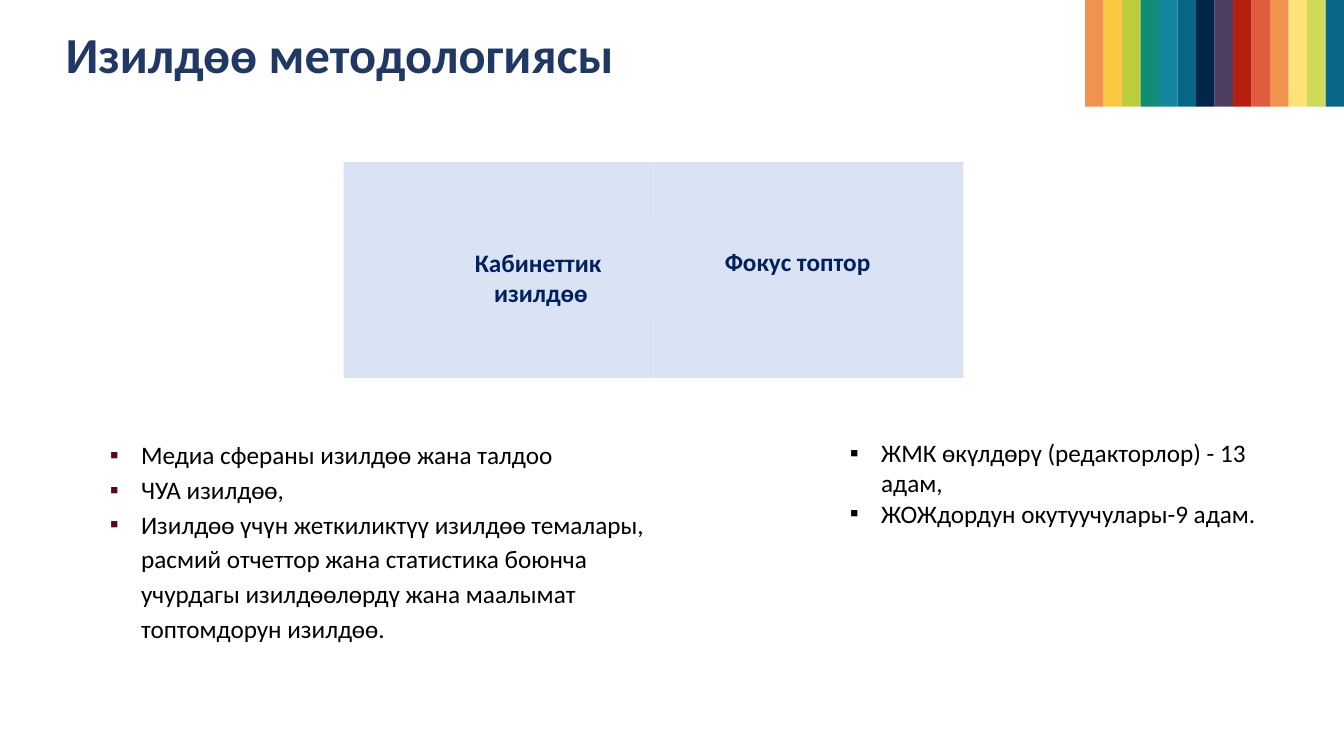
import dataclasses

import lxml.etree
import pptx
import pptx.dml.color
import pptx.enum.shapes
import pptx.enum.text
import pptx.oxml.ns
import pptx.util

KIND = pptx.enum.shapes.MSO_SHAPE
ALIGN = pptx.enum.text.PP_ALIGN
COLS = 160
WIDE = pptx.util.Inches(13.33)
HIGH = pptx.util.Inches(7.5)
UNIT = WIDE / COLS


@dataclasses.dataclass(frozen=True)
class Theme:
    font: str = "Calibri"
    head: int = 36
    body: int = 18
    title: str = "203864"
    label: str = "002060"
    text: str = "000000"
    mark: str = "5D0617"
    panel: str = "DAE3F3"
    bars: tuple = (
        "F0934E", "F9C943", "BCCE3E", "0F8E73", "1387A0", "086787", "032548",
        "4E3F60", "B71F11", "E15C3E", "F0934E", "FDE277", "CFDA57", "086787",
    )


THEME = Theme()


def grid(*cells):
    return [round(cell * UNIT) for cell in cells]


def block(slide, kind, box, color):
    shape = slide.shapes.add_shape(kind, *grid(*box))
    shape.shadow.inherit = False
    shape.fill.solid()
    shape.fill.fore_color.rgb = pptx.dml.color.RGBColor.from_string(color)
    shape.line.fill.background()


def write(para, text, size, color, bold=False):
    run = para.add_run()
    run.text = text
    run.font.name = THEME.font
    run.font.size = pptx.util.Pt(size)
    run.font.bold = bold
    run.font.color.rgb = pptx.dml.color.RGBColor.from_string(color)


def paras(slide, box, lines):
    frame = slide.shapes.add_textbox(*grid(*box)).text_frame
    frame.word_wrap = True
    for index, line in enumerate(lines):
        para = frame.add_paragraph() if index else frame.paragraphs[0]
        yield para, line


def bullet(para, color):
    props = para._p.get_or_add_pPr()
    dent = round(pptx.util.Inches(0.31))
    props.set("marL", str(dent))
    props.set("indent", str(-dent))
    name = pptx.oxml.ns.qn
    tint = lxml.etree.SubElement(props, name("a:buClr"))
    lxml.etree.SubElement(tint, name("a:srgbClr"), val=color)
    lxml.etree.SubElement(props, name("a:buFont"), typeface="Arial")
    lxml.etree.SubElement(props, name("a:buChar"), char="▪")


def title(slide, box, text):
    shape = slide.shapes.title
    shape.left, shape.top, shape.width, shape.height = grid(*box)
    frame = shape.text_frame
    frame.word_wrap = True
    frame.auto_size = pptx.enum.text.MSO_AUTO_SIZE.NONE
    frame.vertical_anchor = pptx.enum.text.MSO_ANCHOR.TOP
    para = frame.paragraphs[0]
    para.alignment = ALIGN.LEFT
    write(para, text, THEME.head, THEME.title, True)


def stripes(slide, box):
    left, top, width, height = box
    step = width / len(THEME.bars)
    for index, color in enumerate(THEME.bars):
        block(slide, KIND.RECTANGLE, (left + index * step, top, step, height), color)


def label(slide, box, lines, align):
    for para, line in paras(slide, box, lines):
        para.alignment = align
        write(para, line, THEME.body, THEME.label, True)


def methods(slide, box):
    left, top, width, height = box
    half = width / 2
    joint = height / 2
    block(slide, KIND.RECTANGLE, (left + half, top, half, height), THEME.panel)
    block(slide, KIND.RECTANGLE, (left, top, half, height), THEME.panel)
    block(slide, KIND.OVAL, (left + half - 4.6, top + joint / 2, 16, joint), THEME.panel)
    row = top + 9.5
    label(slide, (left + 7.1, row, 32.8, 8.5), ("Кабинеттик ", "изилдөө"), ALIGN.CENTER)
    label(slide, (left + 44.2, row, 20.4, 4.8), ("Фокус топтор",), ALIGN.LEFT)


def points(slide, box, lines, mark, space):
    for para, line in paras(slide, box, lines):
        bullet(para, mark)
        para.line_spacing = space
        write(para, line, THEME.body, THEME.text)


def main():
    deck = pptx.Presentation()
    deck.slide_width, deck.slide_height = WIDE, HIGH
    slide = deck.slides.add_slide(deck.slide_layouts[5])
    stripes(slide, (129.2, 0, 30.8, 12.7))
    title(slide, (6.6, 2.2, 122.6, 8.5), "Изилдөө методологиясы")
    methods(slide, (40.9, 19.3, 73.8, 25.7))
    points(slide, (11.9, 51.2, 68.9, 26.3), (
        "Медиа сфераны изилдөө жана талдоо",
        "ЧУА изилдөө,",
        "Изилдөө үчүн жеткиликтүү изилдөө темалары, расмий отчеттор жана "
        "статистика боюнча учурдагы изилдөөлөрдү жана маалымат топтомдорун изилдөө.",
    ), THEME.mark, 1.15)
    points(slide, (100, 51.5, 52.3, 15.4), (
        "ЖМК өкүлдөрү (редакторлор) - 13 адам,",
        "ЖОЖдордун окутуучулары-9 адам.",
    ), THEME.text, 1.0)
    deck.save("out.pptx")


if __name__ == "__main__":
    main()
